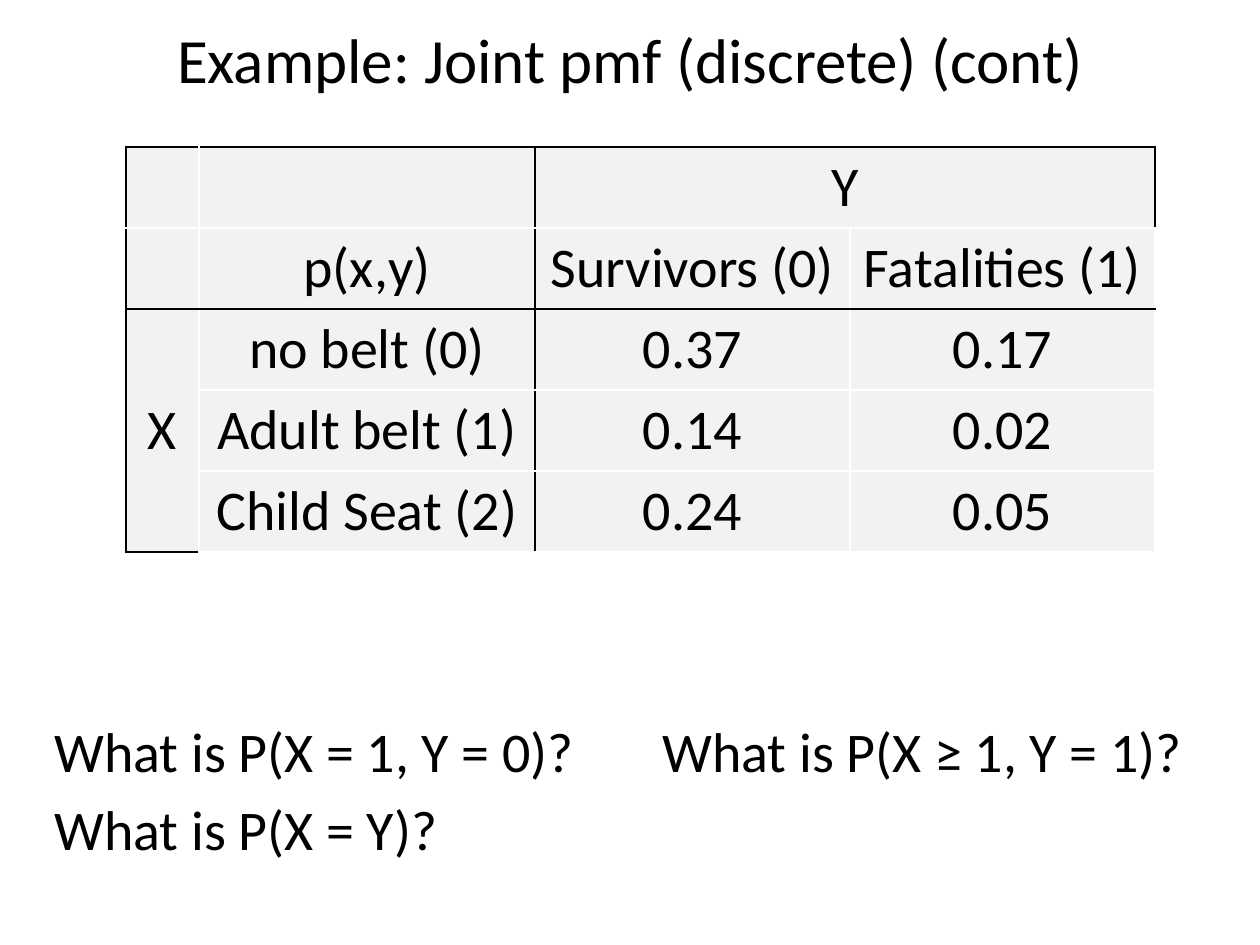
from dataclasses import dataclass

from lxml import etree
from pptx import Presentation
from pptx import util as u
from pptx.dml.color import RGBColor
from pptx.enum import text
from pptx.oxml import ns


@dataclass(frozen=True)
class Theme:
    font: str = "Calibri"
    ink: str = "000000"
    cell: str = "F2F2F2"
    grid: str = "FFFFFF"
    title_size: int = 36
    body_size: int = 32


PX = 914400 / 126  # EMU in one px


def px(*lengths):
    return [u.Emu(round(n * PX)) for n in lengths]


def add_xml(parent, tag, **attrs):
    return etree.SubElement(parent, ns.qn(tag), attrs)


class Deck:
    def __init__(self, theme, width, height):
        self.theme = theme
        self.prs = Presentation()
        self.prs.slide_width, self.prs.slide_height = px(width, height)
        self.s = self.prs.slides.add_slide(self.prs.slide_layouts[5])

    def style(self, p, size, align):
        p.alignment = align
        p.font.name = self.theme.font
        p.font.size = u.Pt(size)
        p.font.color.rgb = RGBColor.from_string(self.theme.ink)

    def title(self, words, *box):
        sp = self.s.shapes.title
        sp.left, sp.top, sp.width, sp.height = px(*box)
        tf = sp.text_frame
        tf.text = words
        tf.vertical_anchor = text.MSO_ANCHOR.MIDDLE
        self.style(tf.paragraphs[0], self.theme.title_size, text.PP_ALIGN.CENTER)

    def questions(self, lines, tab, *box):
        """One paragraph a line; a tab leads to the second column."""
        tf = self.s.shapes.add_textbox(*px(*box)).text_frame
        tf.word_wrap = True
        tf.text = "\n".join(lines)
        for i, p in enumerate(tf.paragraphs):
            self.style(p, self.theme.body_size, text.PP_ALIGN.LEFT)
            if i:
                p.space_before = u.Pt(self.theme.body_size * 0.2)
            stops = etree.Element(ns.qn("a:tabLst"))
            add_xml(stops, "a:tab", pos=str(px(tab)[0]), algn="l")
            p._p.get_or_add_pPr().insert_element_before(stops, "a:defRPr", "a:extLst")

    def borders(self, cell, dark_sides):
        tc_pr = cell._tc.get_or_add_tcPr()
        for i, side in enumerate("LRTB"):
            ln = etree.Element(ns.qn("a:ln" + side), w=str(u.Pt(1)))
            color = self.theme.ink if side in dark_sides else self.theme.grid
            add_xml(add_xml(ln, "a:solidFill"), "a:srgbClr", val=color)
            tc_pr.insert(i, ln)

    def table(self, rows, widths, row_height, merges, dark_sides, left, top):
        """dark_sides(row, col) names the cell sides drawn in ink."""
        size = px(left, top, sum(widths), row_height * len(rows))
        table = self.s.shapes.add_table(len(rows), len(widths), *size).table
        for column, width in zip(table.columns, px(*widths)):
            column.width = width
        for r, row in enumerate(rows):
            table.rows[r].height = px(row_height)[0]
            for c, words in enumerate(row):
                cell = table.cell(r, c)
                cell.text = words
                cell.vertical_anchor = text.MSO_ANCHOR.MIDDLE
                cell.fill.solid()
                cell.fill.fore_color.rgb = RGBColor.from_string(self.theme.cell)
                self.style(cell.text_frame.paragraphs[0], self.theme.body_size,
                           text.PP_ALIGN.CENTER)
                self.borders(cell, dark_sides(r, c))
        for first, last in merges:
            table.cell(*first).merge(table.cell(*last))


def pmf_sides(r, c):
    """Rules round the row labels, the Y heading and the X heading."""
    rules = {
        "L": c in (0, 2),
        "R": c == 1 or (r == 0 and c >= 2),
        "T": r in (0, 2),
        "B": r == 1 or (c == 0 and r >= 2),
    }
    return [side for side, dark in rules.items() if dark]


def main():
    deck = Deck(Theme(), 1260, 945)
    deck.title("Example: Joint pmf (discrete) (cont)", 0, 0, 1260, 116)
    deck.questions(
        ["What is P(X = 1, Y = 0)?\tWhat is P(X ≥ 1, Y = 1)?", "What is P(X = Y)?"],
        608, 42, 710, 1187, 204)
    pmf = [
        ["", "", "Y", ""],
        ["", "p(x,y)", "Survivors (0)", "Fatalities (1)"],
        ["X", "no belt (0)", "0.37", "0.17"],
        ["", "Adult belt (1)", "0.14", "0.02"],
        ["", "Child Seat (2)", "0.24", "0.05"],
    ]
    merges = [((0, 2), (0, 3)), ((2, 0), (4, 0))]
    deck.table(pmf, [73, 336, 315, 305], 81, merges, pmf_sides, 126, 147)
    deck.prs.save("out.pptx")


if __name__ == "__main__":
    main()
